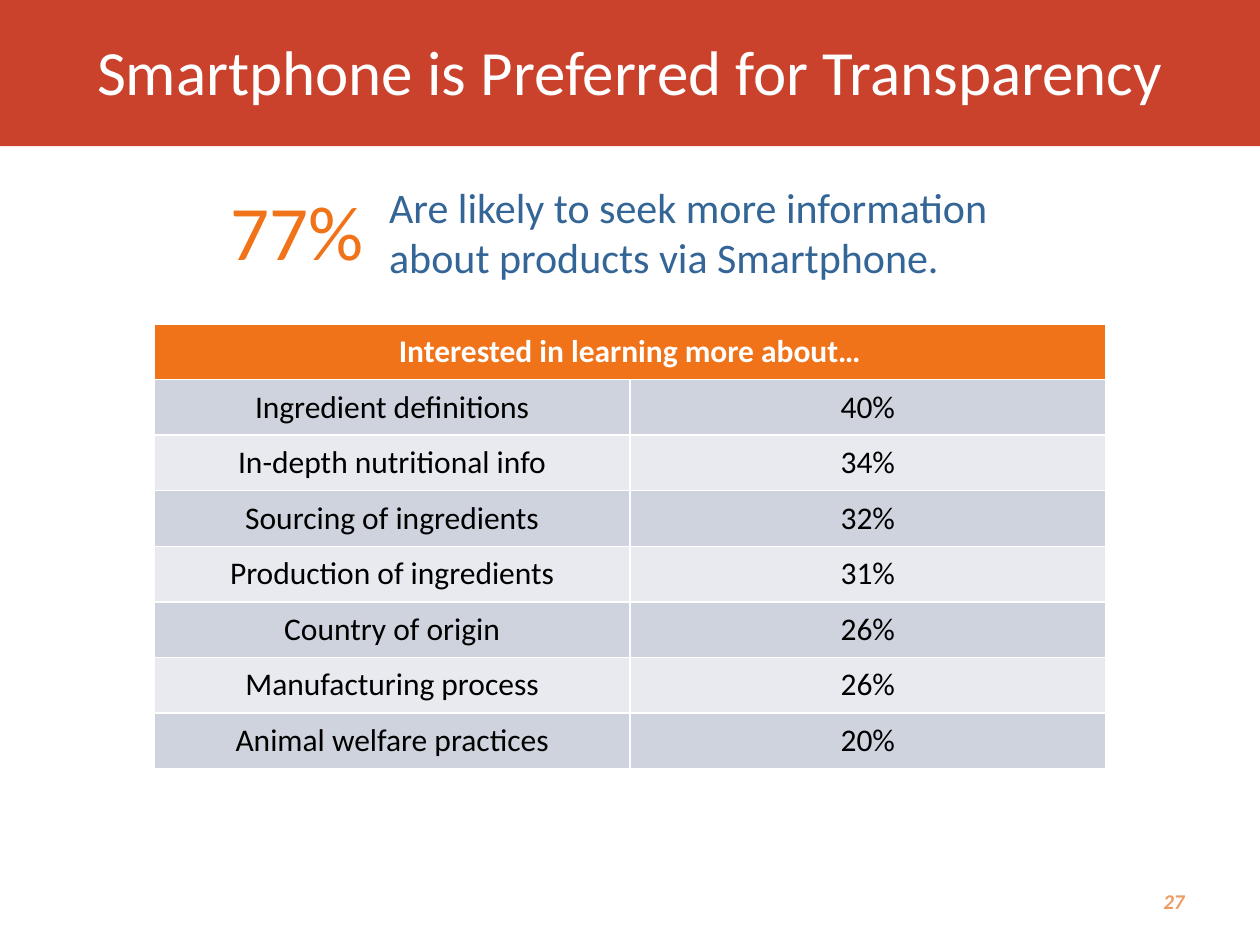
"""Build a slide on smartphone use for product transparency."""
from pptx import Presentation
from pptx.dml.color import RGBColor
from pptx.enum.shapes import MSO_SHAPE
from pptx.enum.text import MSO_ANCHOR, MSO_AUTO_SIZE, PP_ALIGN
from pptx.util import Pt

RECT = MSO_SHAPE.RECTANGLE
MID, TOP = MSO_ANCHOR.MIDDLE, MSO_ANCHOR.TOP
FIXED, GROW = MSO_AUTO_SIZE.NONE, MSO_AUTO_SIZE.SHAPE_TO_FIT_TEXT
LEFT, MIDST, RIGHT = PP_ALIGN.LEFT, PP_ALIGN.CENTER, PP_ALIGN.RIGHT

HUES = {
    "red": "CA412C", "orange": "F07219", "peach": "EE9A62", "blue": "346597",
    "dark": "CED3DD", "light": "E8EAEF", "white": "FFFFFF", "black": "000000",
}
ROWS = [
    ("Ingredient definitions", "40%"),
    ("In-depth nutritional info", "34%"),
    ("Sourcing of ingredients", "32%"),
    ("Production of ingredients", "31%"),
    ("Country of origin", "26%"),
    ("Manufacturing process", "26%"),
    ("Animal welfare practices", "20%"),
]


def paint(fill, hue):
    fill.solid()
    fill.fore_color.rgb = RGBColor.from_string(HUES[hue])


def write(frame, text, hue, align, **form):
    frame.text = text
    para = frame.paragraphs[0]
    para.alignment = align
    font = para.runs[0].font
    font.color.rgb = RGBColor.from_string(HUES[hue])
    for key, val in {"name": "Calibri", **form}.items():
        setattr(font, key, val)
    return para


deck = Presentation()
deck.slide_width, deck.slide_height = Pt(720), Pt(540)
slide = deck.slides.add_slide(deck.slide_layouts[5])
shapes = slide.shapes

title = shapes.title
band = shapes.add_shape(RECT, 0, 0, Pt(720), Pt(83.5))
band.shadow.inherit = False
paint(band.fill, "red")
band.line.fill.background()
title.element.addprevious(band.element)

place = {"left": 0, "top": Pt(10.8), "width": Pt(720), "height": Pt(66.2)}
for key, val in place.items():
    setattr(title, key, val)
head = write(title.text_frame, "Smartphone is Preferred for Transparency",
             "white", MIDST, size=Pt(36))
head.line_spacing = Pt(36)
title.text_frame.auto_size = FIXED
title.text_frame.vertical_anchor = MID

group = shapes.add_group_shape()
quote = "Are likely to seek more information about products via Smartphone."
look = {"size": Pt(12), "bold": True, "italic": True}
BOXES = [
    (shapes, (516.2, 500.4, 167.8, 28.8), "27", "peach", RIGHT, look,
     {"word_wrap": True, "auto_size": FIXED, "vertical_anchor": MID}),
    (group.shapes, (124.6, 101.5, 91.4, 61.2), "77%", "orange", LEFT,
     {"size": Pt(44)},
     {"word_wrap": False, "auto_size": GROW, "vertical_anchor": TOP}),
    (group.shapes, (215.3, 100.1, 358.6, 66.2), quote, "blue", LEFT,
     {"size": Pt(24)},
     {"word_wrap": True, "auto_size": GROW, "vertical_anchor": TOP}),
]
for home, spot, text, hue, align, form, fit in BOXES:
    frame = home.add_textbox(*map(Pt, spot)).text_frame
    write(frame, text, hue, align, **form)
    for key, val in fit.items():
        setattr(frame, key, val)

count = len(ROWS) + 1
high = 31.75
table = shapes.add_table(count, 2, Pt(88.2), Pt(185.2), Pt(543.6),
                         Pt(high * count)).table
table.cell(0, 0).merge(table.cell(0, 1))
pads = {"margin_left": Pt(9.4), "margin_right": Pt(9.4),
        "margin_top": Pt(4.8), "margin_bottom": Pt(4.8)}
lines = [("Interested in learning more about…", ""), *ROWS]
for r, line in enumerate(lines):
    table.rows[r].height = Pt(high)
    back = "orange" if r == 0 else "dark" if r % 2 else "light"
    for c, text in enumerate(line):
        cell = table.cell(r, c)
        paint(cell.fill, back)
        for key, val in pads.items():
            setattr(cell, key, val)
        if text:
            write(cell.text_frame, text, "black" if r else "white", MIDST,
                  size=Pt(18), bold=r == 0)

deck.save("out.pptx")
